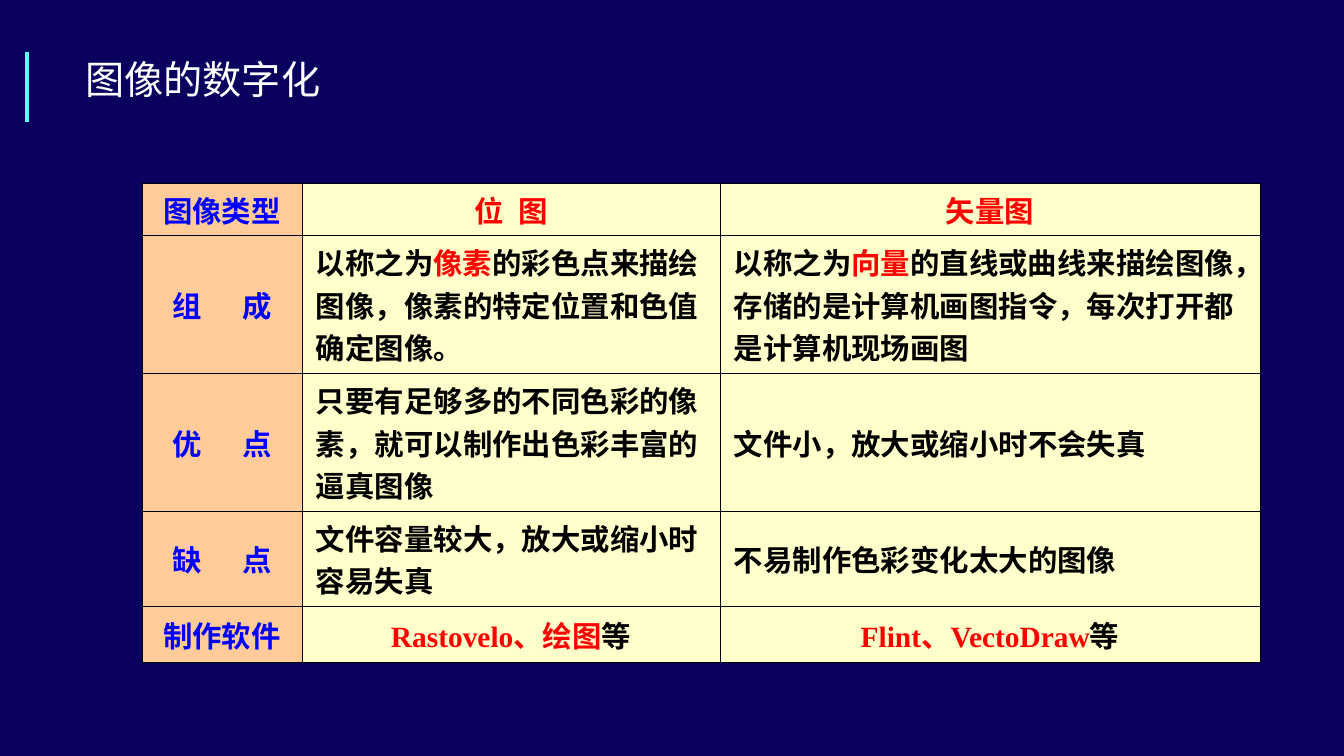
import pptx
import pptx.util
import pptx.oxml
import pptx.oxml.ns
from pptx.dml.color import RGBColor
from pptx.enum.shapes import MSO_CONNECTOR
from pptx.enum.text import MSO_ANCHOR, MSO_AUTO_SIZE, PP_ALIGN

EMU_PER_PX = 914400 / 50.4
COLORS = {
    "background": "0A015E", "title": "FFFFFF", "accent": "5EFFFF",
    "label": "0000FF", "key": "FF0000", "text": "000000",
    "label_fill": "FFCC99", "cell_fill": "FFFFCC", "border": "000000",
}
COL_WIDTHS = [160, 418, 540]
ROW_HEIGHTS = [47, 116, 116, 81, 56]

# Each cell is a list of runs: (text, colour name, extra letter spacing in pt)
TABLE = [
    [[("图像类型", "label", 0)],
     [("位", "key", 21), ("图", "key", 0)],
     [("矢量图", "key", 0)]],
    [[("组", "label", 58), ("成", "label", 0)],
     [("以称之为", "text", 0), ("像素", "key", 0),
      ("的彩色点来描绘图像，像素的特定位置和色值确定图像。", "text", 0)],
     [("以称之为", "text", 0), ("向量", "key", 0),
      ("的直线或曲线来描绘图像，存储的是计算机画图指令，每次打开都是计算机现场画图", "text", 0)]],
    [[("优", "label", 58), ("点", "label", 0)],
     [("只要有足够多的不同色彩的像素，就可以制作出色彩丰富的逼真图像", "text", 0)],
     [("文件小，放大或缩小时不会失真", "text", 0)]],
    [[("缺", "label", 58), ("点", "label", 0)],
     [("文件容量较大，放大或缩小时容易失真", "text", 0)],
     [("不易制作色彩变化太大的图像", "text", 0)]],
    [[("制作软件", "label", 0)],
     [("Rastovelo、绘图", "key", 0), ("等", "text", 0)],
     [("Flint、VectoDraw", "key", 0), ("等", "text", 0)]],
]


def px(n):
    return pptx.util.Emu(round(n * EMU_PER_PX))


def rgb(name):
    return RGBColor.from_string(COLORS[name])


def format_run(r, font, size, color, bold=False):
    r.font.name = font
    r.font.size = pptx.util.Pt(size)
    r.font.bold = bold
    r.font.color.rgb = rgb(color)


def set_margins(target, horizontal, vertical):
    target.margin_left = target.margin_right = px(horizontal)
    target.margin_top = target.margin_bottom = px(vertical)


def add_title(s, text):
    sp = s.shapes.title
    sp.left, sp.top, sp.width, sp.height = px(71), px(43), px(579), px(77)
    tf = sp.text_frame
    tf.text = text
    tf.word_wrap = True
    tf.auto_size = MSO_AUTO_SIZE.NONE
    tf.vertical_anchor = MSO_ANCHOR.MIDDLE
    set_margins(tf, 14, 7)
    p = tf.paragraphs[0]
    p.alignment = PP_ALIGN.LEFT
    p.line_spacing = 0.9
    format_run(p.runs[0], "Arial", 56, "title")


def add_accent_line(s, x, top, bottom):
    line = s.shapes.add_connector(
        MSO_CONNECTOR.STRAIGHT, px(x), px(top), px(x), px(bottom))
    line.line.color.rgb = rgb("accent")
    line.line.width = pptx.util.Pt(6)
    line._element.spPr.append(
        pptx.oxml.parse_xml(f'<a:effectLst {pptx.oxml.ns.nsdecls("a")}/>'))


def set_borders(cell):
    tc_pr = cell._tc.get_or_add_tcPr()
    for i, side in enumerate(("lnL", "lnR", "lnT", "lnB")):
        tc_pr.insert(i, pptx.oxml.parse_xml(
            f'<a:{side} {pptx.oxml.ns.nsdecls("a")} w="9525"><a:solidFill>'
            f'<a:srgbClr val="{COLORS["border"]}"/></a:solidFill></a:{side}>'))


def fill_cell(cell, runs, fill, centered):
    cell.fill.solid()
    cell.fill.fore_color.rgb = rgb(fill)
    cell.vertical_anchor = MSO_ANCHOR.MIDDLE
    set_margins(cell, 14, 5)
    p = cell.text_frame.paragraphs[0]
    p.alignment = PP_ALIGN.CENTER if centered else PP_ALIGN.LEFT
    for text, color, spacing in runs:
        r = p.add_run()
        r.text = text
        format_run(r, "Times New Roman", 42, color, bold=True)
        if spacing:
            r._r.get_or_add_rPr().set("spc", str(spacing * 100))
    set_borders(cell)


def add_comparison_table(s):
    table = s.shapes.add_table(
        len(ROW_HEIGHTS), len(COL_WIDTHS), px(142), px(183),
        px(sum(COL_WIDTHS)), px(sum(ROW_HEIGHTS))).table
    for column, width in zip(table.columns, COL_WIDTHS):
        column.width = px(width)
    for row, height in zip(table.rows, ROW_HEIGHTS):
        row.height = px(height)
    last = len(TABLE) - 1
    for i, row in enumerate(TABLE):
        for j, runs in enumerate(row):
            # Labels, the header row and the software row are centred
            fill_cell(table.cell(i, j), runs,
                      "cell_fill" if j else "label_fill",
                      j == 0 or i in (0, last))


def main():
    prs = pptx.Presentation()
    prs.slide_width, prs.slide_height = px(1344), px(756)
    s = prs.slides.add_slide(prs.slide_layouts[5])
    s.background.fill.solid()
    s.background.fill.fore_color.rgb = rgb("background")

    # Heading with its accent bar
    add_title(s, "图像的数字化")
    add_accent_line(s, 27, 52, 122)

    # Bitmap and vector images compared
    add_comparison_table(s)
    prs.save("out.pptx")


if __name__ == "__main__":
    main()
